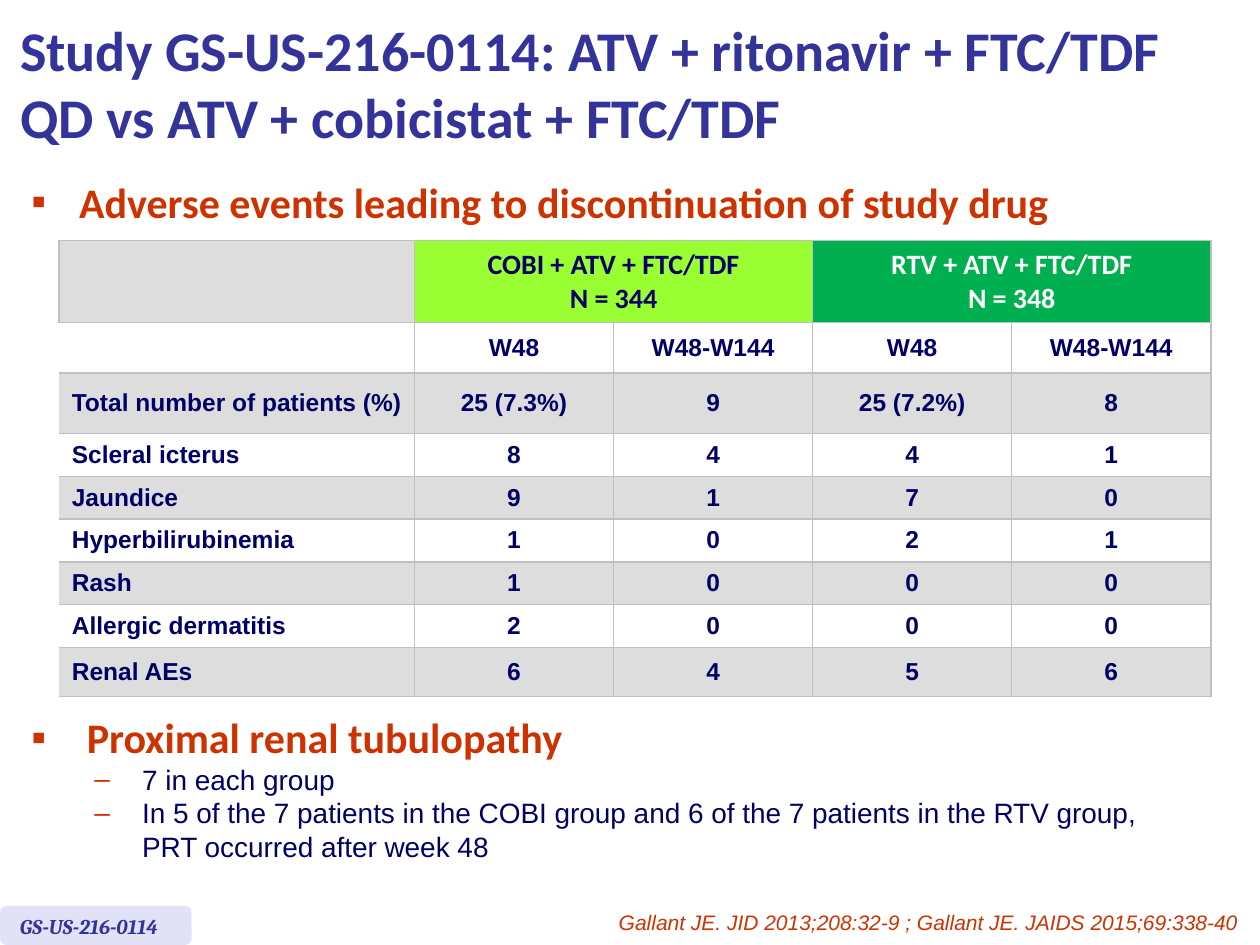
from lxml import etree
from pptx import Presentation
from pptx.dml.color import RGBColor
from pptx.enum import shapes, text
from pptx.oxml import ns
from pptx.util import Inches, Pt

NAVY, RED, INDIGO = "000066", "CC3300", "333399"
GREY, WHITE, BORDER = "DDDDDD", "FFFFFF", "C0C0C0"

TITLE = "Study GS-US-216-0114: ATV + ritonavir + FTC/TDF QD vs ATV + cobicistat + FTC/TDF"
EVENTS_HEADING = "Adverse events leading to discontinuation of study drug"
RENAL_HEADING = "Proximal renal tubulopathy"
RENAL_POINTS = [
    "7 in each group",
    "In 5 of the 7 patients in the COBI group and 6 of the 7 patients in the RTV group, "
    "PRT occurred after week 48",
]
CITATION = "Gallant JE. JID 2013;208:32-9 ; Gallant JE. JAIDS 2015;69:338-40"
STUDY = "GS-US-216-0114"

ARMS = [  # lines, fill, text colour
    (["COBI + ATV + FTC/TDF", "N = 344"], "99FF33", NAVY),
    (["RTV + ATV + FTC/TDF", "N = 348"], "00B050", WHITE),
]
ROWS = [
    ["", "W48", "W48-W144", "W48", "W48-W144"],
    ["Total number of patients (%)", "25 (7.3%)", "9", "25 (7.2%)", "8"],
    ["Scleral icterus", "8", "4", "4", "1"],
    ["Jaundice", "9", "1", "7", "0"],
    ["Hyperbilirubinemia", "1", "0", "2", "1"],
    ["Rash", "1", "0", "0", "0"],
    ["Allergic dermatitis", "2", "0", "0", "0"],
    ["Renal AEs", "6", "4", "5", "6"],
]
COLUMN_WIDTHS = [2.82] + [1.58] * 4
ROW_HEIGHTS = [0.65, 0.32, 0.48] + [0.34] * 5 + [0.39]


def rgb(colour):
    return RGBColor.from_string(colour)


def add_run(paragraph, wording, size, font, colour, bold=False, italic=False):
    run = paragraph.add_run()
    run.text = wording
    run.font.size, run.font.name = Pt(size), font
    run.font.bold, run.font.italic = bold, italic
    run.font.color.rgb = rgb(colour)


def add_text_box(parent, left, top, width, height):
    box = parent.shapes.add_textbox(Inches(left), Inches(top), Inches(width), Inches(height))
    box.text_frame.word_wrap = True
    return box.text_frame


def next_paragraph(frame):
    """Return the empty first paragraph, or a new one once it is used."""
    first = frame.paragraphs[0]
    return frame.add_paragraph() if first.runs else first


def set_bullet(paragraph, character, left, hanging, size):
    properties = paragraph._p.get_or_add_pPr()
    properties.set("marL", str(Inches(left)))
    properties.set("indent", str(-Inches(hanging)))
    colour = etree.SubElement(properties, ns.qn("a:buClr"))
    etree.SubElement(colour, ns.qn("a:srgbClr")).set("val", RED)
    etree.SubElement(properties, ns.qn("a:buSzPts")).set("val", str(size * 100))
    etree.SubElement(properties, ns.qn("a:buFont")).set("typeface", "Arial")
    etree.SubElement(properties, ns.qn("a:buChar")).set("char", character)


def add_heading(frame, wording, indent, bullet_size):
    paragraph = next_paragraph(frame)
    set_bullet(paragraph, "▪", indent, indent, bullet_size)
    add_run(paragraph, wording, 24, "Calibri", RED, bold=True)


def style_cell(cell, fill, left_border=True):
    properties = cell._tc.get_or_add_tcPr()
    for side in ("lnL", "lnR", "lnT", "lnB"):
        line = etree.SubElement(properties, ns.qn(f"a:{side}"), w=str(Pt(1)))
        if side == "lnL" and not left_border:
            etree.SubElement(line, ns.qn("a:noFill"))
        else:
            solid = etree.SubElement(line, ns.qn("a:solidFill"))
            etree.SubElement(solid, ns.qn("a:srgbClr")).set("val", BORDER)
    cell.fill.solid()
    cell.fill.fore_color.rgb = rgb(fill)
    cell.vertical_anchor = text.MSO_ANCHOR.MIDDLE


def add_events_table(slide):
    table = slide.shapes.add_table(
        len(ROW_HEIGHTS), len(COLUMN_WIDTHS), Inches(0.47), Inches(1.91),
        Inches(sum(COLUMN_WIDTHS)), Inches(sum(ROW_HEIGHTS))).table
    for column, width in zip(table.columns, COLUMN_WIDTHS):
        column.width = Inches(width)
    for row, height in zip(table.rows, ROW_HEIGHTS):
        row.height = Inches(height)

    style_cell(table.cell(0, 0), GREY)
    for arm, (lines, fill, colour) in enumerate(ARMS):
        first, last = table.cell(0, 1 + 2 * arm), table.cell(0, 2 + 2 * arm)
        first.merge(last)
        style_cell(first, fill)
        style_cell(last, fill)
        for line in lines:
            paragraph = next_paragraph(first.text_frame)
            paragraph.alignment = text.PP_ALIGN.CENTER
            add_run(paragraph, line, 16, "Calibri", colour, bold=True)

    for r, values in enumerate(ROWS, start=1):
        for c, value in enumerate(values):
            cell = table.cell(r, c)
            style_cell(cell, WHITE if r % 2 else GREY, left_border=c > 0)
            paragraph = cell.text_frame.paragraphs[0]
            paragraph.alignment = text.PP_ALIGN.CENTER if c else text.PP_ALIGN.LEFT
            if value:
                add_run(paragraph, value, 14, "Arial", NAVY, bold=True)


def add_study_tag(slide):
    group = slide.shapes.add_group_shape()
    tag = group.shapes.add_shape(shapes.MSO_SHAPE.ROUNDED_RECTANGLE,
                                 Inches(0), Inches(7.19), Inches(1.52), Inches(0.31))
    tag.shadow.inherit = False
    tag.fill.solid()
    tag.fill.fore_color.rgb = rgb("E2E2F6")
    tag.line.fill.background()
    frame = add_text_box(group, 0.06, 7.2, 1.41, 0.3)
    add_run(frame.paragraphs[0], STUDY, 12, "Cambria", INDIGO, bold=True, italic=True)


def main():
    presentation = Presentation()
    presentation.slide_width, presentation.slide_height = Inches(10), Inches(7.5)
    slide = presentation.slides.add_slide(presentation.slide_layouts[5])

    title = slide.shapes.title
    title.left, title.top = Inches(0.06), Inches(0.05)
    title.width, title.height = Inches(9.55), Inches(1.21)
    title.text_frame.auto_size = text.MSO_AUTO_SIZE.NONE
    title.text_frame.vertical_anchor = text.MSO_ANCHOR.MIDDLE
    paragraph = title.text_frame.paragraphs[0]
    paragraph.alignment = text.PP_ALIGN.LEFT
    add_run(paragraph, TITLE, 32, "Calibri", INDIGO, bold=True)

    add_heading(add_text_box(slide, 0.15, 1.35, 9.46, 0.51), EVENTS_HEADING, 0.38, 24)
    add_events_table(slide)

    renal = add_text_box(slide, 0.15, 5.6, 9.19, 1.33)
    add_heading(renal, RENAL_HEADING, 0.44, 20)
    for point in RENAL_POINTS:
        paragraph = next_paragraph(renal)
        paragraph.level = 1
        set_bullet(paragraph, "–", 0.88, 0.38, 16)
        add_run(paragraph, point, 16, "Arial", NAVY)

    citation = add_text_box(slide, 4.02, 7.17, 5.95, 0.3)
    citation.margin_right = Inches(0.14)
    citation.paragraphs[0].alignment = text.PP_ALIGN.RIGHT
    add_run(citation.paragraphs[0], CITATION, 12, "Arial", RED, italic=True)

    add_study_tag(slide)
    presentation.save("out.pptx")


if __name__ == "__main__":
    main()
